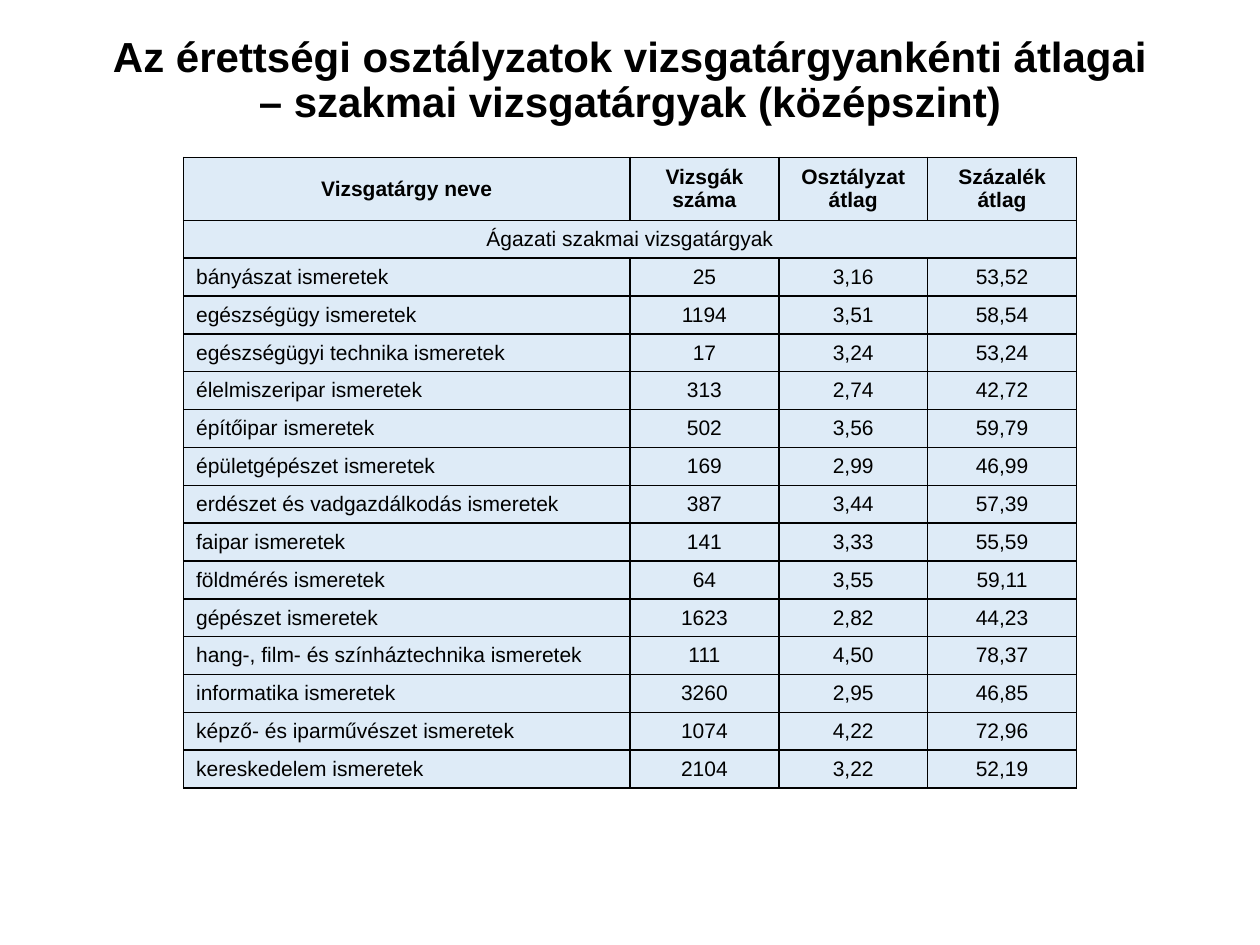
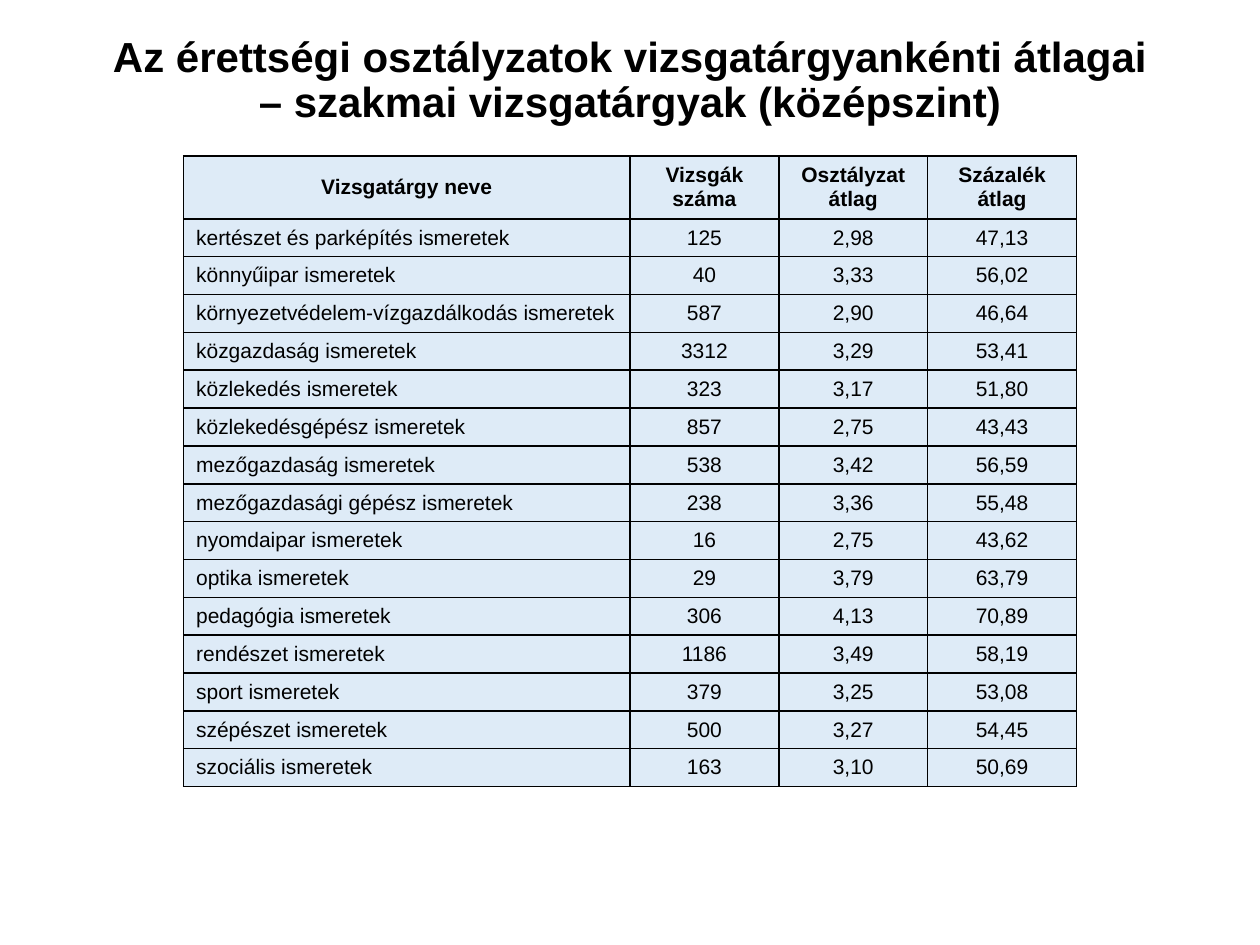
from pptx import Presentation as Deck
from pptx.dml.color import RGBColor
from pptx.enum.text import MSO_ANCHOR as Anchor, PP_ALIGN as Align
from pptx.oxml import parse_xml
from pptx.oxml.ns import nsdecls
from pptx.util import Cm, Pt

TITLE = "Az érettségi osztályzatok vizsgatárgyankénti átlagai – szakmai vizsgatárgyak (középszint)"
HEAD = ("Vizsgatárgy neve", "Vizsgák száma", "Osztályzat átlag", "Százalék átlag")
GROUP = ("Ágazati szakmai vizsgatárgyak",)
FIRST = [
    ("bányászat ismeretek", "25", "3,16", "53,52"),
    ("egészségügy ismeretek", "1194", "3,51", "58,54"),
    ("egészségügyi technika ismeretek", "17", "3,24", "53,24"),
    ("élelmiszeripar ismeretek", "313", "2,74", "42,72"),
    ("építőipar ismeretek", "502", "3,56", "59,79"),
    ("épületgépészet ismeretek", "169", "2,99", "46,99"),
    ("erdészet és vadgazdálkodás ismeretek", "387", "3,44", "57,39"),
    ("faipar ismeretek", "141", "3,33", "55,59"),
    ("földmérés ismeretek", "64", "3,55", "59,11"),
    ("gépészet ismeretek", "1623", "2,82", "44,23"),
    ("hang-, film- és színháztechnika ismeretek", "111", "4,50", "78,37"),
    ("informatika ismeretek", "3260", "2,95", "46,85"),
    ("képző- és iparművészet ismeretek", "1074", "4,22", "72,96"),
    ("kereskedelem ismeretek", "2104", "3,22", "52,19"),
]
SECOND = [
    ("kertészet és parképítés ismeretek", "125", "2,98", "47,13"),
    ("könnyűipar ismeretek", "40", "3,33", "56,02"),
    ("környezetvédelem-vízgazdálkodás ismeretek", "587", "2,90", "46,64"),
    ("közgazdaság ismeretek", "3312", "3,29", "53,41"),
    ("közlekedés ismeretek", "323", "3,17", "51,80"),
    ("közlekedésgépész ismeretek", "857", "2,75", "43,43"),
    ("mezőgazdaság ismeretek", "538", "3,42", "56,59"),
    ("mezőgazdasági gépész ismeretek", "238", "3,36", "55,48"),
    ("nyomdaipar ismeretek", "16", "2,75", "43,62"),
    ("optika ismeretek", "29", "3,79", "63,79"),
    ("pedagógia ismeretek", "306", "4,13", "70,89"),
    ("rendészet ismeretek", "1186", "3,49", "58,19"),
    ("sport ismeretek", "379", "3,25", "53,08"),
    ("szépészet ismeretek", "500", "3,27", "54,45"),
    ("szociális ismeretek", "163", "3,10", "50,69"),
]


def color(code):
    return RGBColor.from_string(code)


def apply(target, values):
    for name, value in values.items():
        setattr(target, name, value)


class Pen:
    """Holds the shared style and the slide being filled."""

    ink, tint, face = "000000", "DEEBF7", "Arial"
    cols = (9, 3, 3, 3)
    tall, low = 1.21, 0.73

    def __init__(self, deck):
        self.deck = deck

    def page(self):
        self.slide = self.deck.slides.add_slide(self.deck.slide_layouts[6])

    def label(self, para, text, size, bold, align):
        para.text = text
        para.alignment = align
        apply(para.runs[0].font, {"name": self.face, "size": Pt(size), "bold": bold})
        para.runs[0].font.color.rgb = color(self.ink)

    def title(self, text):
        box = self.slide.shapes.add_textbox(Cm(1.75), Cm(-0.2), Cm(21.9), Cm(3.68))
        apply(box.text_frame, {"word_wrap": True, "vertical_anchor": Anchor.MIDDLE})
        para = box.text_frame.paragraphs[0]
        self.label(para, text, 24, True, Align.CENTER)
        para.line_spacing = 0.9

    def frame(self, cell):
        """Draw a thin line on each side of the cell, then fill it."""
        props = cell._tc.get_or_add_tcPr()
        for side in "LRTB":
            props.append(parse_xml(
                f'<a:ln{side} {nsdecls("a")} w="{Pt(1)}"><a:solidFill>'
                f'<a:srgbClr val="{self.ink}"/></a:solidFill></a:ln{side}>'))
        cell.fill.solid()
        cell.fill.fore_color.rgb = color(self.tint)

    def table(self, top, rows):
        """Place the rows under each other; a row of one text spans all columns."""
        high = self.tall + self.low * (len(rows) - 1)
        grid = self.slide.shapes.add_table(
            len(rows), len(self.cols), Cm(3.7), Cm(top), Cm(sum(self.cols)), Cm(high)).table
        apply(grid, {"first_row": False, "horz_banding": False})
        for col, width in zip(grid.columns, self.cols):
            col.width = Cm(width)
        for i, row in enumerate(rows):
            grid.rows[i].height = Cm(self.low if i else self.tall)
            if len(row) == 1:
                grid.cell(i, 0).merge(grid.cell(i, len(self.cols) - 1))
            for j in range(len(self.cols)):
                cell = grid.cell(i, j)
                self.frame(cell)
                cell.vertical_anchor = Anchor.MIDDLE
                if j < len(row):
                    left = i > 0 and j == 0 and len(row) > 1
                    self.label(cell.text_frame.paragraphs[0], row[j], 12, i == 0,
                               Align.LEFT if left else Align.CENTER)


def main():
    deck = Deck()
    apply(deck, {"slide_width": Cm(25.4), "slide_height": Cm(19.05)})
    pen = Pen(deck)
    for top, rows in ((3.17, [HEAD, GROUP, *FIRST]), (3.14, [HEAD, *SECOND])):
        pen.page()
        pen.title(TITLE)
        pen.table(top, rows)
    deck.save("out.pptx")


if __name__ == "__main__":
    main()
